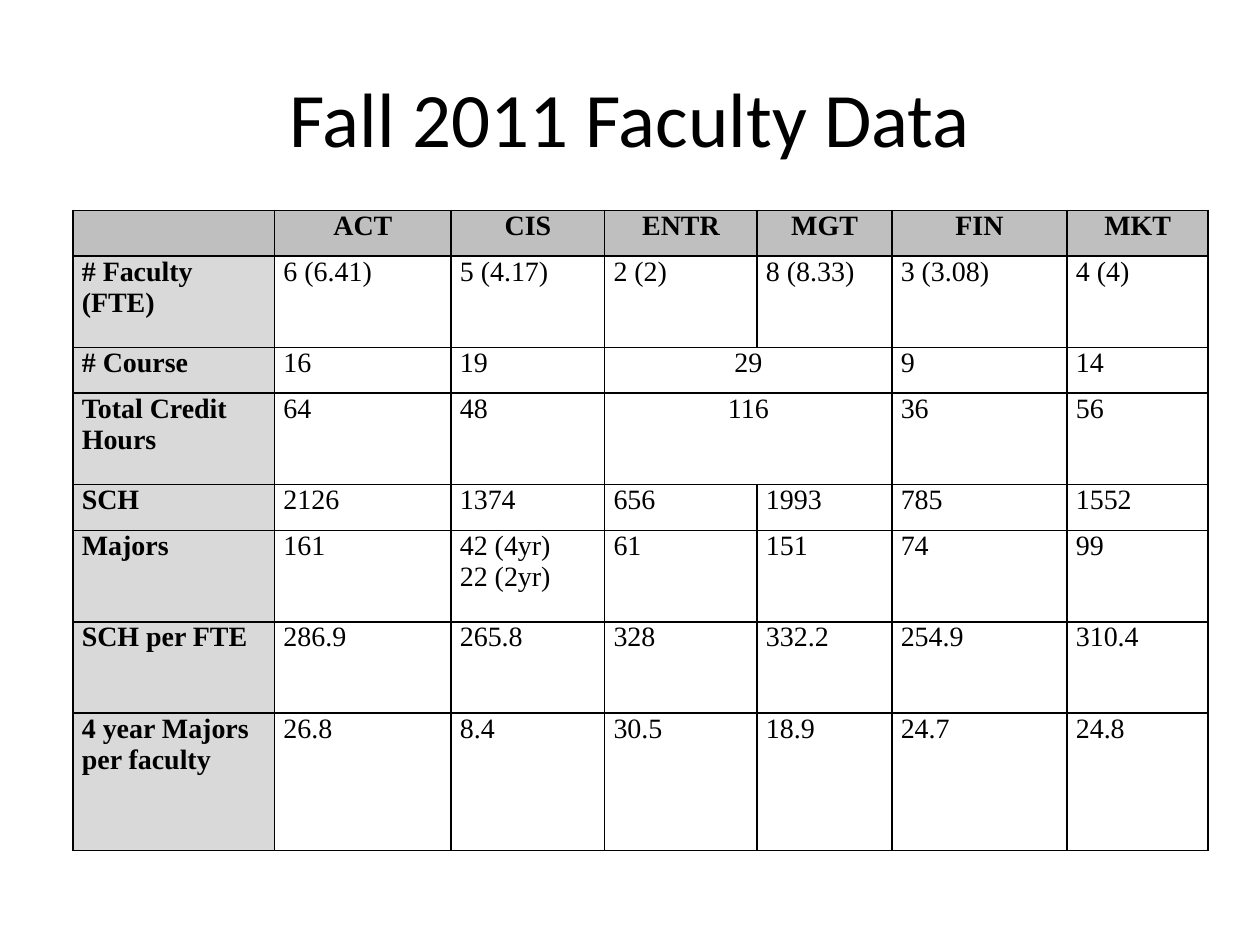
from lxml.etree import SubElement
from pptx import Presentation
from pptx.dml.color import RGBColor
from pptx.enum.text import MSO_ANCHOR, PP_ALIGN
from pptx.oxml.ns import qn
from pptx.util import Inches, Pt

TITLE = "Fall 2011 Faculty Data"
ROWS = [
    ["", "ACT", "CIS", "ENTR", "MGT", "FIN", "MKT"],
    ["# Faculty (FTE)", "6 (6.41)", "5 (4.17)", "2 (2)", "8 (8.33)", "3 (3.08)", "4 (4)"],
    ["# Course", "16", "19", "29", None, "9", "14"],
    ["Total Credit Hours", "64", "48", "116", None, "36", "56"],
    ["SCH", "2126", "1374", "656", "1993", "785", "1552"],
    ["Majors", "161", "42 (4yr)\n22 (2yr)", "61", "151", "74", "99"],
    ["SCH per FTE", "286.9", "265.8", "328", "332.2", "254.9", "310.4"],
    ["4 year Majors per faculty", "26.8", "8.4", "30.5", "18.9", "24.7", "24.8"],
]
COLUMN_WIDTHS = [1.6, 1.4, 1.22, 1.21, 1.07, 1.39, 1.12]
ROW_LINES = [1, 2, 1, 2, 1, 2, 2, 3]
TABLE_LEFT, TABLE_TOP, TABLE_HEIGHT = 0.58, 1.67, 5.08
COLORS = {"text": "000000", "border": "000000", "header": "BFBFBF", "label": "D9D9D9"}
TITLE_FONT = {"name": "Calibri", "size": Pt(44)}
CELL_FONT = {"name": "Times New Roman", "size": Pt(16)}
MARGINS = {"margin_left": Inches(0.07), "margin_right": Inches(0.07),
           "margin_top": 0, "margin_bottom": 0}


def apply(target, values):
    for name, value in values.items():
        setattr(target, name, value)


def write(p, font, align, bold=False):
    p.alignment = align
    for r in p.runs:
        apply(r.font, {**font, "bold": bold})
        r.font.color.rgb = RGBColor.from_string(COLORS["text"])


def add_borders(cell):
    tc_pr = cell._tc.get_or_add_tcPr()
    for side in ("lnL", "lnR", "lnT", "lnB"):
        line = SubElement(tc_pr, qn(f"a:{side}"), w=str(Pt(1)))
        fill = SubElement(line, qn("a:solidFill"))
        SubElement(fill, qn("a:srgbClr"), val=COLORS["border"])


def fill_cell(cell, color):
    if color:
        cell.fill.solid()
        cell.fill.fore_color.rgb = RGBColor.from_string(color)
    else:
        cell.fill.background()


def add_title(s):
    title = s.shapes.title
    apply(title, {"left": Inches(0.5), "top": Inches(0.3),
                  "width": Inches(9), "height": Inches(1.25)})
    tf = title.text_frame
    tf.text = TITLE
    tf.vertical_anchor = MSO_ANCHOR.MIDDLE
    write(tf.paragraphs[0], TITLE_FONT, PP_ALIGN.CENTER)


def add_faculty_table(s):
    table = s.shapes.add_table(
        len(ROWS), len(COLUMN_WIDTHS), Inches(TABLE_LEFT), Inches(TABLE_TOP),
        Inches(sum(COLUMN_WIDTHS)), Inches(TABLE_HEIGHT)).table
    apply(table, {"first_row": False, "horz_banding": False})
    for column, width in zip(table.columns, COLUMN_WIDTHS):
        column.width = Inches(width)
    for row, lines in zip(table.rows, ROW_LINES):
        row.height = Inches(TABLE_HEIGHT * lines / sum(ROW_LINES))
    for i, values in enumerate(ROWS):
        for j, value in enumerate(values):
            cell = table.cell(i, j)
            apply(cell, MARGINS)
            add_borders(cell)
            fill_cell(cell, COLORS["header"] if i == 0 else COLORS["label"] if j == 0 else None)
            if value is None:
                table.cell(i, j - 1).merge(cell)
                continue
            cell.text = value
            spans = j + 1 < len(values) and values[j + 1] is None
            align = PP_ALIGN.CENTER if i == 0 or spans else PP_ALIGN.LEFT
            for p in cell.text_frame.paragraphs:
                write(p, CELL_FONT, align, bold=i == 0 or j == 0)


def main():
    prs = Presentation()
    apply(prs, {"slide_width": Inches(10), "slide_height": Inches(7.5)})
    s = prs.slides.add_slide(prs.slide_layouts[5])
    add_title(s)
    add_faculty_table(s)
    prs.save("out.pptx")


if __name__ == "__main__":
    main()
